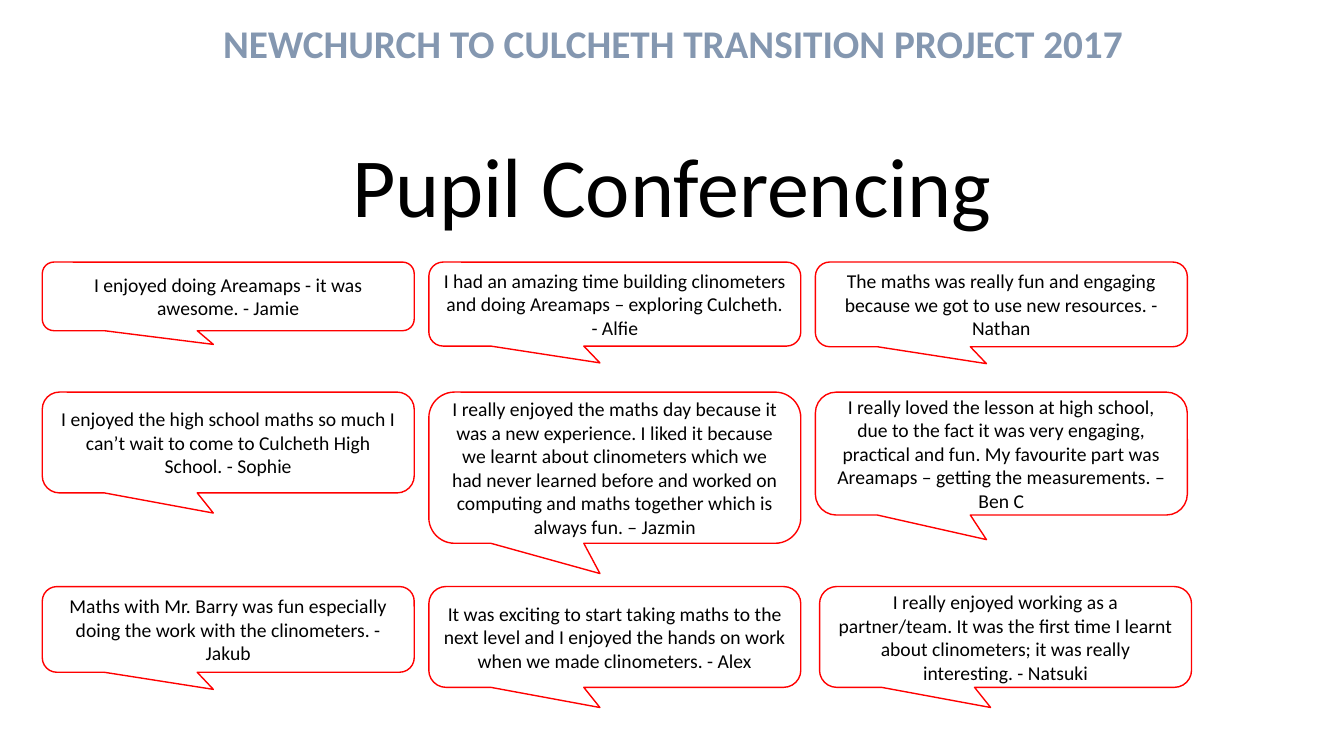
import pptx
import pptx.util
import pptx.dml.color
import pptx.enum.shapes
import pptx.enum.text

Pt = pptx.util.Pt
ALIGN = pptx.enum.text.PP_ALIGN
ANCHOR = pptx.enum.text.MSO_ANCHOR


def color(value):
    return pptx.dml.color.RGBColor.from_string(value)


def write(box, text, anchor, hue, **font):
    """Put one centred paragraph into a box."""
    box.text_frame.vertical_anchor = anchor
    para = box.text_frame.paragraphs[0]
    para.alignment = ALIGN.CENTER
    span = para.add_run()
    span.text = text
    for name, value in {"name": "Calibri", **font}.items():
        setattr(span.font, name, value)
    span.font.color.rgb = color(hue)
    return para


deck = pptx.Presentation()
deck.slide_width, deck.slide_height = Pt(960), Pt(540)
page = deck.slides.add_slide(deck.slide_layouts[6])

heading = page.shapes.add_textbox(Pt(148.3), Pt(10), Pt(664.6), Pt(41))
heading.text_frame.word_wrap = False
write(heading, "NEWCHURCH TO CULCHETH TRANSITION PROJECT 2017",
      ANCHOR.TOP, "8497B0", size=Pt(28), bold=True)

title = page.shapes.add_textbox(Pt(120), Pt(88.6), Pt(720), Pt(83.5))
title.text_frame.word_wrap = True
title_para = write(title, "Pupil Conferencing", ANCHOR.BOTTOM, "000000", size=Pt(60))
title_para.line_spacing = 0.9

# Each row: top, then (height, quote) from left to right
quote_rows = [
    (187.2, [
        (49, "I enjoyed doing Areamaps - it was awesome. - Jamie"),
        (60, "I had an amazing time building clinometers and doing Areamaps – "
             "exploring Culcheth. - Alfie"),
        (60.5, "The maths was really fun and engaging because we got to use "
               "new resources. - Nathan"),
    ]),
    (280.1, [
        (72, "I enjoyed the high school maths so much I can’t wait to come to "
             "Culcheth High School. - Sophie"),
        (108, "I really enjoyed the maths day because it was a new experience. "
              "I liked it because we learnt about clinometers which we had never "
              "learned before and worked on computing and maths together which "
              "is always fun. – Jazmin"),
        (87.8, "I really loved the lesson at high school, due to the fact it was "
               "very engaging, practical and fun. My favourite part was Areamaps "
               "– getting the measurements. – Ben C"),
    ]),
    (419, [
        (61.2, "Maths with Mr. Barry was fun especially doing the work with the "
               "clinometers. - Jakub"),
        (72, "It was exciting to start taking maths to the next level and I "
             "enjoyed the hands on work when we made clinometers. - Alex"),
        (72, "I really enjoyed working as a partner/team. It was the first time "
             "I learnt about clinometers; it was really interesting. - Natsuki"),
    ]),
]
first_left, column_step, bubble_width = 30.2, 276.1, 265.7
last_bubble_shift = 3

for row, (top, quotes) in enumerate(quote_rows):
    for column, (height, quote) in enumerate(quotes):
        left = first_left + column * column_step
        if (row, column) == (2, 2):
            left += last_bubble_shift
        bubble = page.shapes.add_shape(
            pptx.enum.shapes.MSO_SHAPE.ROUNDED_RECTANGULAR_CALLOUT,
            Pt(left), Pt(top), Pt(bubble_width), Pt(height))
        for index, value in enumerate((-0.04, 0.7, 0.17)):
            bubble.adjustments[index] = value
        bubble.shadow.inherit = False
        bubble.fill.solid()
        bubble.fill.fore_color.rgb = color("FFFFFF")
        bubble.line.color.rgb = color("FF0000")
        bubble.line.width = Pt(1)
        bubble.text_frame.word_wrap = True
        write(bubble, quote, ANCHOR.MIDDLE, "000000", size=Pt(14))

deck.save("out.pptx")
